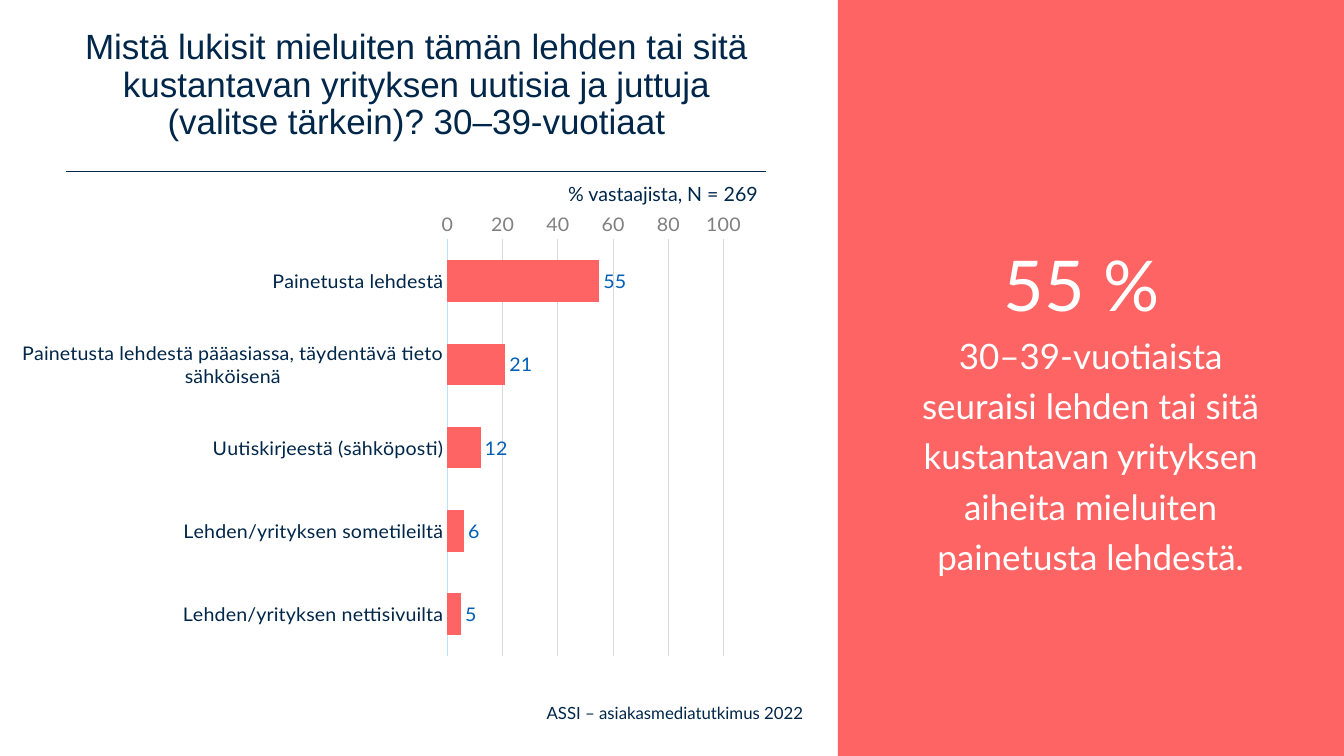
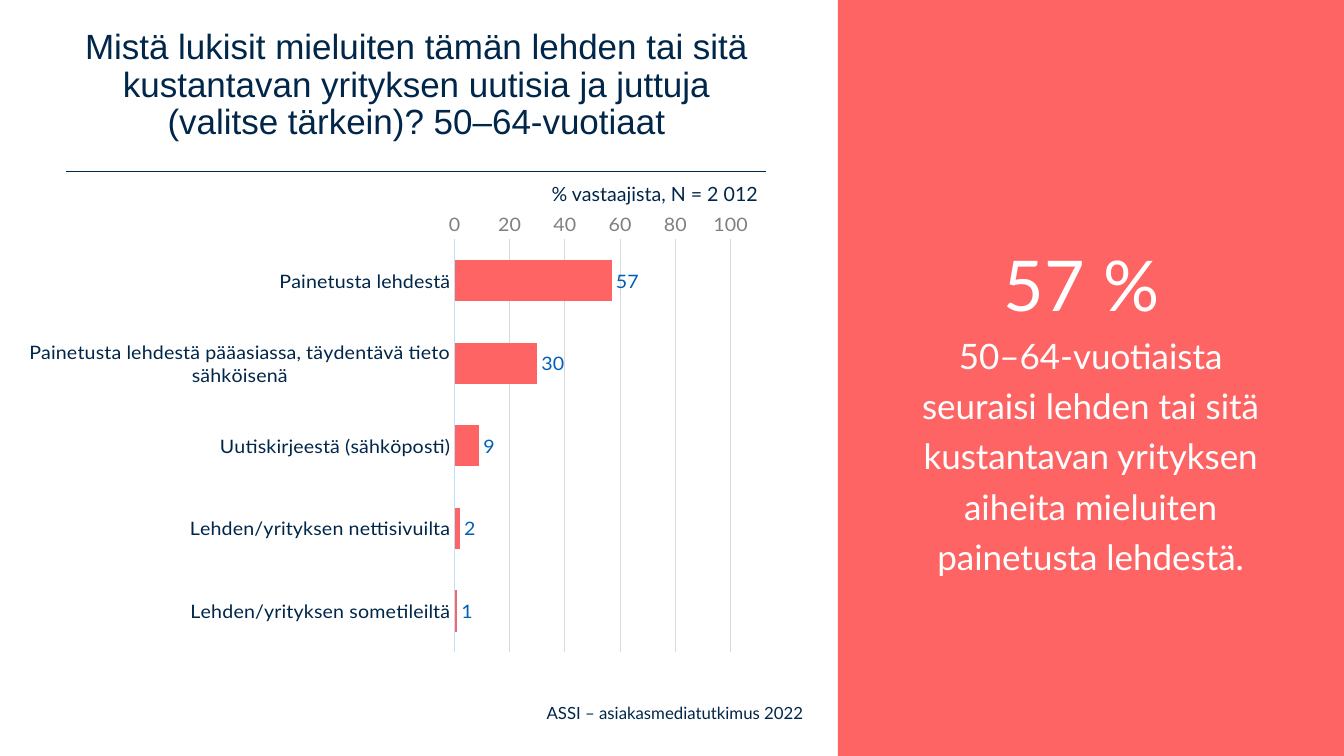
from lxml import etree
from pptx import Presentation
from pptx.chart.data import CategoryChartData
from pptx.dml.color import RGBColor
from pptx.enum.chart import (XL_AXIS_CROSSES, XL_CHART_TYPE, XL_LABEL_POSITION,
                             XL_TICK_MARK)
from pptx.enum.shapes import MSO_CONNECTOR, MSO_SHAPE
from pptx.enum.text import MSO_ANCHOR, MSO_AUTO_SIZE, PP_ALIGN
from pptx.oxml import parse_xml
from pptx.oxml.ns import nsdecls, qn
from pptx.util import Inches, Pt

NAVY, CORAL, BLUE, PALE_BLUE = "002649", "FF6464", "005FB6", "BDE0FF"
GREY, LIGHT_GREY, WHITE = "808080", "D9D9D9", "FFFFFF"

PRINT = "Painetusta lehdestä"
MOSTLY_PRINT = "Painetusta lehdestä pääasiassa, täydentävä tieto sähköisenä"
NEWSLETTER = "Uutiskirjeestä (sähköposti)"
SOCIAL = "Lehden/yrityksen sometileiltä"
WEBSITE = "Lehden/yrityksen nettisivuilta"

# age group, respondents, shares of answers, left and top of the plot in the chart
surveys = [
    ("30–39", "269", {PRINT: 55, MOSTLY_PRINT: 21, NEWSLETTER: 12, SOCIAL: 6, WEBSITE: 5},
     0.594, 0.008),
    ("50–64", "2 012", {PRINT: 57, MOSTLY_PRINT: 30, NEWSLETTER: 9, WEBSITE: 2, SOCIAL: 1},
     0.603, 0),
]

presentation = Presentation()
presentation.slide_width, presentation.slide_height = Inches(13.33), Inches(7.5)


def area(left, top, width, height):
    """Turn percentages of the slide's size into left, top, width and height."""
    across, down = presentation.slide_width / 100, presentation.slide_height / 100
    return round(left * across), round(top * down), round(width * across), round(height * down)


def style_font(font, size, color, name="Lato"):
    font.size, font.name = Pt(size), name
    font.color.rgb = RGBColor.from_string(color)


# Layout shared by both slides
layout = presentation.slide_layouts[1]
for placeholder in list(layout.placeholders)[2:]:
    placeholder.element.getparent().remove(placeholder.element)
title_area = area(4.95, 0, 52.05, 22.67)
for placeholder, place in zip(layout.placeholders, (title_area, area(66.15, 22.67, 30, 60.8))):
    placeholder.left, placeholder.top, placeholder.width, placeholder.height = place

slides = [presentation.slides.add_slide(layout) for _ in surveys]
shapes = slides[0].shapes

footer = shapes.add_textbox(*area(0.23, 93.2, 100, 2.4))
footer.text_frame.word_wrap = True
footer.text_frame.vertical_anchor = MSO_ANCHOR.MIDDLE
paragraph = footer.text_frame.paragraphs[0]
paragraph.alignment, paragraph.line_spacing = PP_ALIGN.CENTER, 0.9
run = paragraph.add_run()
run.text = "ASSI – asiakasmediatutkimus 2022"
style_font(run.font, 12, NAVY)

band = shapes.add_shape(MSO_SHAPE.RECTANGLE, *area(62.34, 0, 37.66, 100))
band.shadow.inherit = False
band.fill.solid()
band.fill.fore_color.rgb = RGBColor.from_string(CORAL)
band.line.fill.background()

left, top, width, height = title_area
title_rule = shapes.add_connector(MSO_CONNECTOR.STRAIGHT, left, top + height,
                                  left + width, top + height)
title_rule.line.width = Pt(1)
title_rule.line.color.rgb = RGBColor.from_string(NAVY)
etree.SubElement(title_rule.element.spPr, qn("a:effectLst"))

first_placeholder = layout.placeholders[0].element
for shape in (footer, band, title_rule):
    first_placeholder.addprevious(shape.element)

for slide, (ages, respondents, answers, plot_left, plot_top) in zip(slides, surveys):
    title, body = slide.placeholders
    sample = slide.shapes.add_textbox(*area(25.8, 23.47, 31.35, 4.53))
    texts = [
        (title, PP_ALIGN.CENTER, 0.9, "Arial", NAVY,
         [("Mistä lukisit mieluiten tämän lehden tai sitä kustantavan yrityksen uutisia "
           f"ja juttuja (valitse tärkein)? {ages}-vuotiaat", 25)]),
        (body, PP_ALIGN.CENTER, 1.2, "Lato", WHITE,
         [(f"{answers[PRINT]} % ", 50),
          (f"{ages}-vuotiaista seuraisi lehden tai sitä kustantavan yrityksen aiheita "
           "mieluiten painetusta lehdestä.", 25)]),
        (sample, PP_ALIGN.RIGHT, 1.0, "Lato", NAVY,
         [(f"% vastaajista, N = {respondents}", 14)]),
    ]
    for shape, alignment, spacing, font_name, color, lines in texts:
        frame = shape.text_frame
        frame.word_wrap, frame.auto_size = True, MSO_AUTO_SIZE.NONE
        frame.vertical_anchor = MSO_ANCHOR.TOP if shape is sample else MSO_ANCHOR.MIDDLE
        paragraph = frame.paragraphs[0]
        paragraph.alignment, paragraph.line_spacing = alignment, spacing
        paragraph.space_before = Pt(0)
        if shape is body:
            properties = paragraph._p.get_or_add_pPr()
            properties.set("marL", "0")
            properties.set("indent", "0")
            etree.SubElement(properties, qn("a:buNone"))
        for number, (text, size) in enumerate(lines):
            if number:
                paragraph.add_line_break()
            run = paragraph.add_run()
            run.text = text
            style_font(run.font, size, color, font_name)

    chart_data = CategoryChartData()
    chart_data.categories = list(answers)
    chart_data.add_series("Series 1", list(answers.values()))
    chart = slide.shapes.add_chart(XL_CHART_TYPE.BAR_CLUSTERED,
                                   *area(-1.27, 28.13, 58.2, 64.53), chart_data).chart
    chart.has_legend = chart.has_title = False
    style_font(chart.font, 10, NAVY, "Calibri")

    plot = chart.plots[0]
    plot.gap_width, plot.vary_by_categories = 100, False
    fill = plot.series[0].format.fill
    fill.solid()
    fill.fore_color.rgb = RGBColor.from_string(CORAL)
    plot.has_data_labels = True
    labels = plot.data_labels
    labels.show_value, labels.position = True, XL_LABEL_POSITION.OUTSIDE_END
    labels.number_format, labels.number_format_is_linked = "#,##0", False
    style_font(labels.font, 14, BLUE)

    for axis, color in ((chart.category_axis, NAVY), (chart.value_axis, GREY)):
        axis.major_tick_mark = axis.minor_tick_mark = XL_TICK_MARK.NONE
        style_font(axis.tick_labels.font, 14, color)
    category_axis, value_axis = chart.category_axis, chart.value_axis
    category_axis.reverse_order = True
    category_axis.crosses = XL_AXIS_CROSSES.MAXIMUM
    value_axis.minimum_scale, value_axis.maximum_scale, value_axis.major_unit = 0, 100, 20
    value_axis.has_major_gridlines = True
    value_axis.format.line.fill.background()
    for line, color in ((category_axis.format.line, PALE_BLUE),
                        (value_axis.major_gridlines.format.line, LIGHT_GREY)):
        line.width = Pt(0.75)
        line.color.rgb = RGBColor.from_string(color)

    plot_area = chart._chartSpace.chart.plotArea
    for old_layout in plot_area.findall(qn("c:layout")):
        plot_area.remove(old_layout)
    plot_area.insert(0, parse_xml(
        f'<c:layout {nsdecls("c")}><c:manualLayout><c:layoutTarget val="inner"/>'
        '<c:xMode val="edge"/><c:yMode val="edge"/>'
        f'<c:x val="{plot_left}"/><c:y val="{plot_top}"/><c:w val="0.353"/><c:h val="0.896"/>'
        '</c:manualLayout></c:layout>'))

presentation.save("out.pptx")
